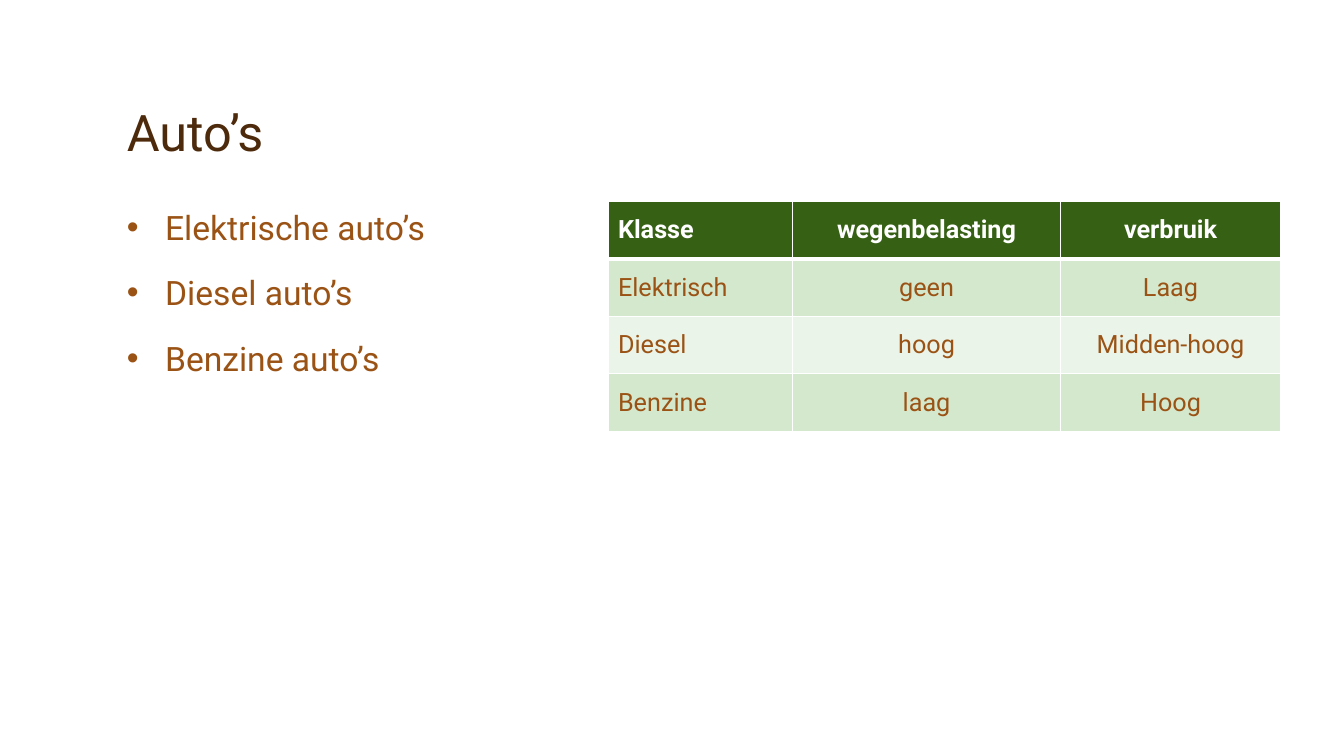
from lxml import etree
from pptx import Presentation
from pptx.dml.color import RGBColor
from pptx.enum.text import MSO_ANCHOR as Anchor, PP_ALIGN as Align
from pptx.oxml.ns import qn
from pptx.util import Inches, Pt

FONT = "Roboto"
DARK_BROWN = RGBColor(0x4D, 0x2A, 0x0B)
BROWN = RGBColor(0x9A, 0x53, 0x15)
WHITE = RGBColor(0xFF, 0xFF, 0xFF)
DARK_GREEN = RGBColor(0x36, 0x60, 0x13)
BANDS = (RGBColor(0xD4, 0xE8, 0xCD), RGBColor(0xEB, 0xF4, 0xE8))

CAR_TYPES = ("Elektrische auto’s", "Diesel auto’s", "Benzine auto’s")
COL_WIDTHS = (1.83, 2.66, 2.18)
ROW_HEIGHT = 0.57
CAR_TABLE = (
    ("Klasse", "wegenbelasting", "verbruik"),
    ("Elektrisch", "geen", "Laag"),
    ("Diesel", "hoog", "Midden-hoog"),
    ("Benzine", "laag", "Hoog"),
)


def set_font(p, size, color, bold=False):
    formats = {"name": FONT, "size": Pt(size), "bold": bold}
    for r in p.runs:
        for name, value in formats.items():
            setattr(r.font, name, value)
        r.font.color.rgb = color


def add_text_frame(s, left, top, width, height, anchor):
    box = s.shapes.add_textbox(*map(Inches, (left, top, width, height)))
    tf = box.text_frame
    tf.word_wrap = True
    tf.vertical_anchor = anchor
    return tf


def add_title(s, text):
    tf = add_text_frame(s, 1.16, 0.33, 11, 1.33, Anchor.BOTTOM)
    p = tf.paragraphs[0]
    p.text = text
    p.line_spacing = 0.9
    set_font(p, 36, DARK_BROWN)


def add_bullet(p):
    pPr = p._p.get_or_add_pPr()
    pPr.set("marL", str(Inches(0.38)))
    pPr.set("indent", str(-Inches(0.38)))
    etree.SubElement(pPr, qn("a:buFont"), typeface="Arial")
    etree.SubElement(pPr, qn("a:buChar"), char="•")


def add_bullet_list(s, items):
    tf = add_text_frame(s, 1.16, 2, 4.8, 4.58, Anchor.TOP)
    for i, item in enumerate(items):
        p = tf.add_paragraph() if i else tf.paragraphs[0]
        p.text = item
        add_bullet(p)
        if i:
            p.space_before = Pt(18)
        set_font(p, 24, BROWN)


def set_borders(cell, widths):
    """Draw white borders; widths maps the sides L, R, T, B to points."""
    tcPr = cell._tc.get_or_add_tcPr()
    for side, width in widths.items():
        ln = etree.SubElement(tcPr, qn(f"a:ln{side}"), w=str(Pt(width)))
        fill = etree.SubElement(ln, qn("a:solidFill"))
        etree.SubElement(fill, qn("a:srgbClr"), val=str(WHITE))


def fill_cell(cell, text, row, col):
    header = row == 0
    set_borders(cell, {"L": 1, "R": 1, "T": 3 if row == 1 else 1,
                       "B": 3 if header else 1})
    cell.fill.solid()
    cell.fill.fore_color.rgb = DARK_GREEN if header else BANDS[(row - 1) % 2]
    cell.vertical_anchor = Anchor.MIDDLE
    p = cell.text_frame.paragraphs[0]
    p.text = text
    p.alignment = Align.CENTER if col else Align.LEFT
    set_font(p, 18, WHITE if header else BROWN, header)


def add_car_table(s, rows):
    frame = s.shapes.add_table(
        len(rows), len(COL_WIDTHS), Inches(6.03), Inches(2),
        Inches(sum(COL_WIDTHS)), Inches(ROW_HEIGHT * len(rows)))
    table = frame.table
    for column, width in zip(table.columns, COL_WIDTHS):
        column.width = Inches(width)
    for i, row in enumerate(rows):
        table.rows[i].height = Inches(ROW_HEIGHT)
        for j, text in enumerate(row):
            fill_cell(table.cell(i, j), text, i, j)


def main():
    prs = Presentation()
    prs.slide_width, prs.slide_height = Inches(13.33), Inches(7.5)
    s = prs.slides.add_slide(prs.slide_layouts[6])
    add_title(s, "Auto’s")
    add_bullet_list(s, CAR_TYPES)
    add_car_table(s, CAR_TABLE)
    prs.save("out.pptx")


if __name__ == "__main__":
    main()
